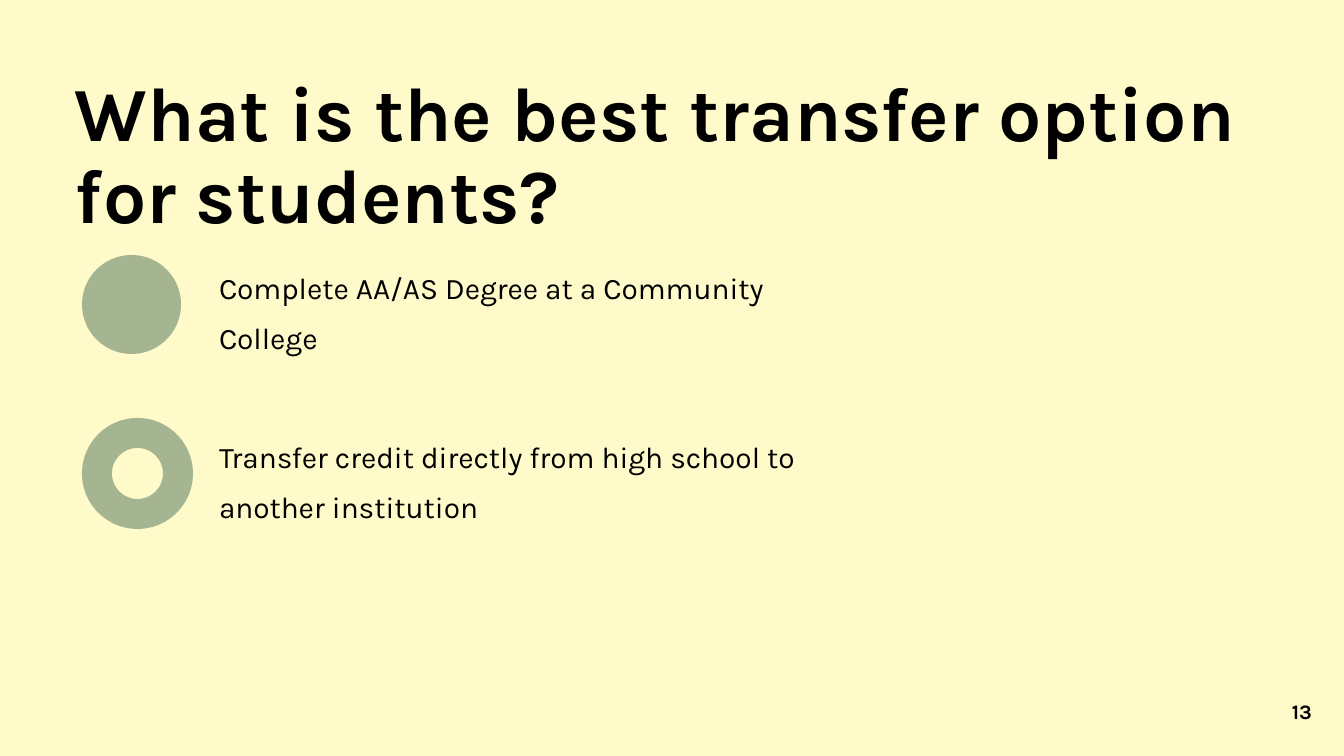
"""Build the slide about transfer options for students."""
from dataclasses import dataclass

from pptx import Presentation
from pptx import util as u
from pptx.dml import color
from pptx.enum import shapes, text

PX = 914400 / 134.4


@dataclass(frozen=True)
class Theme:
    """Colours, font and type sizes."""
    background: str = "FEFAC9"
    ink: str = "000000"
    accent: str = "A5B592"
    font: str = "Karla"
    title: int = 41
    body: int = 16
    number: int = 11


class Page:
    """Style and current slide, with a method for each kind of element."""

    def __init__(self, deck, theme):
        """Add a title-only slide with a plain background."""
        self.theme = theme
        self.slide = deck.slides.add_slide(deck.slide_layouts[5])
        self.paint(self.slide.background.fill, theme.background)

    def paint(self, fill, value):
        """Give a fill one solid colour."""
        fill.solid()
        fill.fore_color.rgb = color.RGBColor.from_string(value)

    def set_text(self, box, words, size, bold=False, spacing=1.0,
                 align=text.PP_ALIGN.LEFT, anchor=text.MSO_ANCHOR.TOP):
        """Fill a box with one formatted paragraph."""
        frame = box.text_frame
        frame_format = {
            "margin_left": 0, "margin_top": 0, "margin_right": 0, "margin_bottom": 0,
            "word_wrap": True, "auto_size": text.MSO_AUTO_SIZE.NONE,
            "vertical_anchor": anchor,
        }
        para = frame.paragraphs[0]
        span = para.add_run()
        span.text = words
        para_format = {"alignment": align, "line_spacing": spacing}
        font_format = {"name": self.theme.font, "size": u.Pt(size), "bold": bold}
        for target, values in ((frame, frame_format), (para, para_format),
                               (span.font, font_format)):
            for name, value in values.items():
                setattr(target, name, value)
        self.paint(span.font.fill, self.theme.ink)

    def title(self, words, **place):
        """Move and fill the title placeholder."""
        box = self.slide.shapes.title
        for name, value in place.items():
            setattr(box, name, u.Emu(round(value * PX)))
        self.set_text(box, words, self.theme.title, bold=True, spacing=0.9)

    def textbox(self, words, place, size, **style):
        """Add a text box."""
        box = self.slide.shapes.add_textbox(*(round(value * PX) for value in place))
        self.set_text(box, words, size, **style)

    def marker(self, kind, left, top, size):
        """Add a round marker without outline."""
        place = (round(value * PX) for value in (left, top, size, size))
        shape = self.slide.shapes.add_shape(kind, *place)
        shape.shadow.inherit = False
        shape.line.fill.background()
        self.paint(shape.fill, self.theme.accent)
        return shape


def main():
    """Build and save the deck."""
    deck = Presentation()
    deck.slide_width, deck.slide_height = round(1344 * PX), round(756 * PX)
    theme = Theme()
    page = Page(deck, theme)
    page.title("What is the best transfer option for students?",
               left=75, top=75, width=1227, height=106)

    page.marker(shapes.MSO_SHAPE.OVAL, 82, 255, 99)
    ring = page.marker(shapes.MSO_SHAPE.DONUT, 82, 418, 111)
    ring.adjustments[0] = 0.27

    options = (
        ("Complete AA/AS Degree at a Community College", 255),
        ("Transfer credit directly from high school to another institution", 424),
    )
    for words, top in options:
        page.textbox(words, (219, top, 577, 101), theme.body, spacing=1.4)

    page.textbox("13", (1231, 698, 81, 27), theme.number, bold=True,
                 align=text.PP_ALIGN.RIGHT, anchor=text.MSO_ANCHOR.MIDDLE)
    deck.save("out.pptx")


if __name__ == "__main__":
    main()
